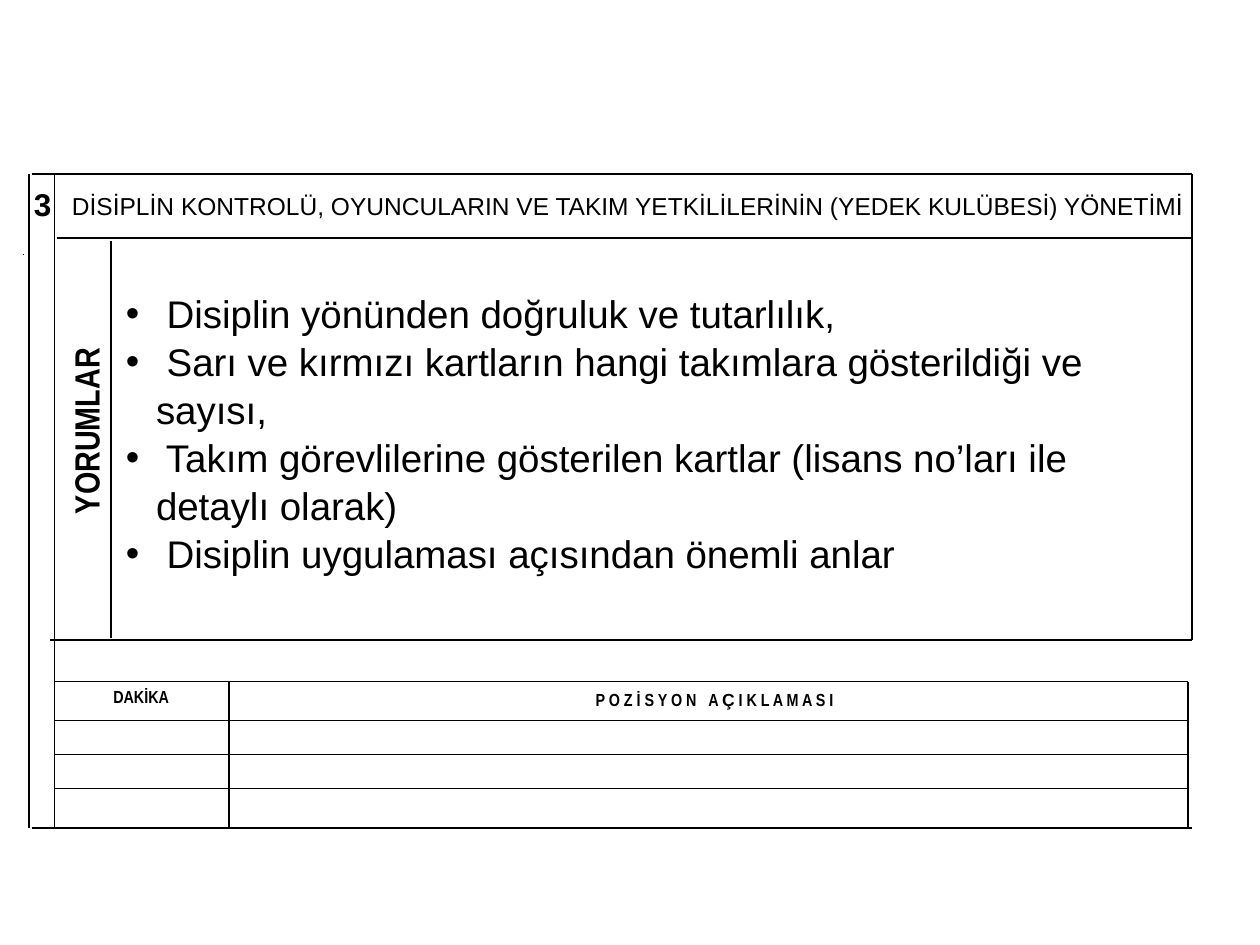
from lxml import etree
from pptx import Presentation
from pptx.dml.color import RGBColor
from pptx.enum import shapes, text
from pptx.oxml.ns import qn
from pptx.util import Inches, Pt

COLORS = {"ink": "000000", "paper": "FFFFFF"}
NARROW = "Arial Narrow"


def add_line(page, x1, y1, x2, y2, width=0.75):
    line = page.shapes.add_connector(
        shapes.MSO_CONNECTOR.STRAIGHT,
        Inches(x1), Inches(y1), Inches(x2), Inches(y2))
    line.line.color.rgb = RGBColor.from_string(COLORS["ink"])
    line.line.width = Pt(width)
    etree.SubElement(line._element.spPr, qn("a:effectLst"))


def add_span(para, words, size, font="Arial", bold=False, tracking=None):
    span = para.add_run()
    span.text = words
    span.font.size = Pt(size)
    span.font.name = font
    span.font.bold = bold
    span.font.color.rgb = RGBColor.from_string(COLORS["ink"])
    if tracking:
        span.font._element.set("spc", str(round(tracking * 100)))


def add_box(page, left, top, width, height):
    return page.shapes.add_textbox(
        Inches(left), Inches(top), Inches(width), Inches(height))


def set_label(box, spans, size, anchor=text.MSO_ANCHOR.MIDDLE, **style):
    """Fill a box with one centred line; spans are (words, overrides)."""
    frame = box.text_frame
    frame.word_wrap = True
    frame.auto_size = text.MSO_AUTO_SIZE.NONE
    frame.vertical_anchor = anchor
    para = frame.paragraphs[0]
    para.alignment = text.PP_ALIGN.CENTER
    for words, overrides in spans:
        add_span(para, words, size, **{**style, **overrides})


def add_bullets(box, items, size, indent):
    frame = box.text_frame
    frame.word_wrap = True
    for index, words in enumerate(items):
        para = frame.paragraphs[0] if index == 0 else frame.add_paragraph()
        props = para._p.get_or_add_pPr()
        props.set("marL", str(Inches(indent)))
        props.set("indent", str(-Inches(indent)))
        para.line_spacing = 1.04
        etree.SubElement(props, qn("a:buFont")).set("typeface", "Arial")
        etree.SubElement(props, qn("a:buChar")).set("char", "•")
        add_span(para, words, size)


def draw_frame(page, left, top, right, bottom):
    """Outer form frame with the section number column."""
    column = left + 0.2
    for y in (top, bottom):
        add_line(page, left + 0.02, y, right, y, 1)
    for x in (left, column):
        add_line(page, x, top, x, bottom)
    add_line(page, 0.18, 2.02, 0.19, 2.02, 1)
    number = add_box(page, left - 0.02, top - 0.2, 0.16, 0.64)
    set_label(number, [("3", {})], 18, text.MSO_ANCHOR.BOTTOM, bold=True)
    number.text_frame.word_wrap = False
    number.text_frame.margin_right = 0


def draw_comments(page, left, top, right, bottom):
    """Heading row, rotated side label and bulleted comments."""
    heading_bottom = top + 0.51
    divider = left + 0.45
    add_line(page, left + 0.02, heading_bottom, right - 0.01, heading_bottom)
    add_line(page, left - 0.03, bottom, right, bottom)
    add_line(page, right, top, right, bottom)
    add_line(page, divider, heading_bottom + 0.02, divider, bottom - 0.02)

    title = page.shapes.title
    title.left, title.top = Inches(0.32), Inches(top - 0.07)
    title.width, title.height = Inches(9.33), Inches(0.64)
    set_label(title, [(
        "DİSİPLİN KONTROLÜ, OYUNCULARIN VE TAKIM YETKİLİLERİNİN "
        "(YEDEK KULÜBESİ) YÖNETİMİ", {})], 14)

    side = add_box(page, -0.69, 3.22, 2.74, 0.4)
    side.rotation = 270
    set_label(side, [("YORUMLAR", {})], 20, font=NARROW, bold=True)

    add_bullets(add_box(page, divider + 0.02, 2.24, 8.43, 3.06), [
        " Disiplin yönünden doğruluk ve tutarlılık,",
        " Sarı ve kırmızı kartların hangi takımlara gösterildiği ve sayısı,",
        " Takım görevlilerine gösterilen kartlar (lisans no’ları ile "
        "detaylı olarak)",
        " Disiplin uygulaması açısından önemli anlar",
    ], size=22, indent=0.24)


def draw_positions(page, left, top, right, bottom):
    """Ruled grid for minute and description entries."""
    divider = left + 1.39
    for y in (top, 5.72, 5.99, 6.26):
        add_line(page, left, y, right, y)
    for x in (divider, right):
        add_line(page, x, top, x, bottom, 1)
    set_label(add_box(page, left + 0.1, top - 0.02, 1.18, 0.28),
              [("DAKİKA", {})], 10, font=NARROW, bold=True)
    set_label(add_box(page, divider, top, 7.7, 0.28), [
        ("P O Z İ S Y O N", {}),
        (" ", {"tracking": 4.5}),
        ("A ", {}),
        ("Ç", {"font": "Arial"}),
        (" I K L A M A S I", {}),
    ], 10, font=NARROW, bold=True)


def main():
    deck = Presentation()
    deck.slide_width, deck.slide_height = Inches(10), Inches(7.5)
    page = deck.slides.add_slide(deck.slide_layouts[5])
    page.background.fill.solid()
    page.background.fill.fore_color.rgb = RGBColor.from_string(COLORS["paper"])
    draw_frame(page, 0.23, 1.38, 9.46, 6.57)
    draw_comments(page, 0.43, 1.38, 9.46, 5.08)
    draw_positions(page, 0.43, 5.41, 9.43, 6.57)
    deck.save("out.pptx")


if __name__ == "__main__":
    main()
